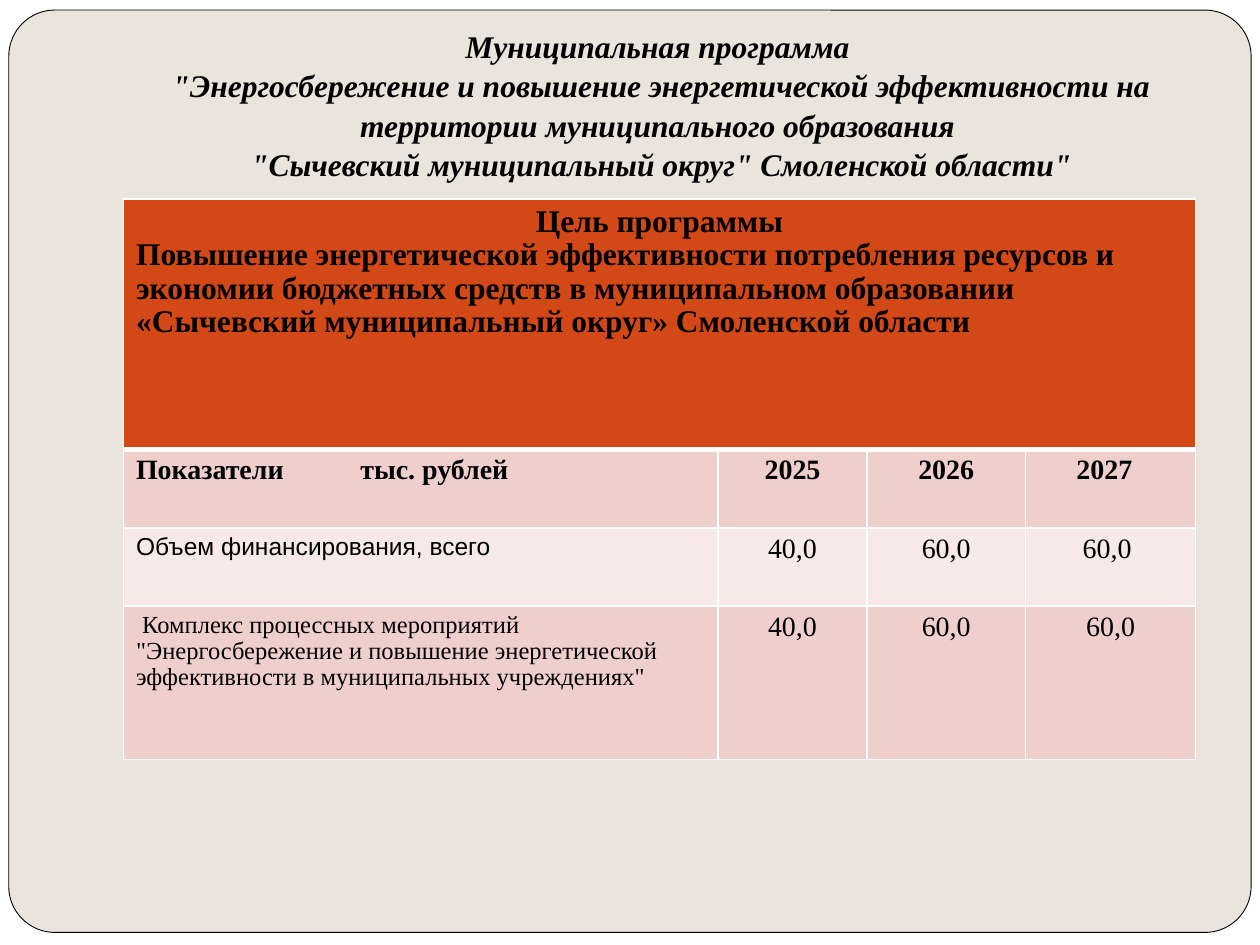
from dataclasses import dataclass

from lxml.etree import SubElement
from pptx import Presentation
from pptx.dml.color import RGBColor
from pptx.enum.shapes import MSO_SHAPE as Shape
from pptx.enum.text import MSO_ANCHOR as Anchor, PP_ALIGN as Align
from pptx.oxml.ns import qn
from pptx.util import Inches, Pt

SERIF, SANS = "Times New Roman", "Arial"
BLACK, WHITE, PAPER = "000000", "FFFFFF", "E9E5DC"
ORANGE, PINK, PALE = "D34817", "EFCFCC", "F7E9E8"
COLUMNS = (4.72, 1.18, 1.26, 1.35)
ROWS = (1.99, 0.62, 0.62, 1.22)
UNIT_TAB = 1.78

TITLE = (
    "Муниципальная программа \v"
    '"Энергосбережение и повышение энергетической эффективности на '
    "территории муниципального образования \v"
    '"Сычевский муниципальный округ" Смоленской области"'
)
GOAL = (
    "Повышение энергетической эффективности потребления ресурсов и экономии "
    "бюджетных средств в муниципальном образовании «Сычевский муниципальный "
    "округ» Смоленской области"
)
ACTIVITIES = (
    ' Комплекс процессных мероприятий "Энергосбережение и повышение '
    'энергетической эффективности в муниципальных учреждениях"'
)


@dataclass(frozen=True)
class Style:
    size: float
    bold: bool = False
    italic: bool = False
    name: str = SERIF
    align: Align = Align.LEFT
    spacing: float = 0.96


@dataclass(frozen=True)
class Indicator:
    label: str
    values: tuple[str, ...]
    fill: str
    label_style: Style
    value_style: Style


HEADING = Style(18, bold=True, italic=True, align=Align.CENTER, spacing=1.04)
GOAL_HEAD = Style(18, bold=True, align=Align.CENTER)
GOAL_BODY = Style(18, bold=True)
YEAR = Style(16, bold=True, align=Align.CENTER)
AMOUNT = Style(16, align=Align.CENTER)
INDICATORS = (
    Indicator("Показатели\tтыс. рублей", ("2025", "2026", "2027"), PINK, Style(16, bold=True), YEAR),
    Indicator("Объем финансирования, всего", ("40,0", "60,0", "60,0 "), PALE, Style(14, name=SANS), AMOUNT),
    Indicator(ACTIVITIES, ("40,0", "60,0", "60,0"), PINK, Style(14), AMOUNT),
)


def color(value: str) -> RGBColor:
    return RGBColor.from_string(value)


def write(paragraph, text: str, style: Style) -> None:
    paragraph.text = text
    paragraph.alignment = style.align
    paragraph.line_spacing = style.spacing
    formats = {"size": Pt(style.size), "bold": style.bold, "italic": style.italic, "name": style.name}
    for run in paragraph.runs:
        for attribute, value in formats.items():
            setattr(run.font, attribute, value)
        run.font.color.rgb = color(BLACK)


def add_panel(slide, kind: Shape, box: tuple[float, ...], fill: str):
    panel = slide.shapes.add_shape(kind, *map(Inches, box))
    panel.shadow.inherit = False
    panel.fill.solid()
    panel.fill.fore_color.rgb = color(fill)
    panel.line.fill.background()
    return panel


def add_frame(slide) -> None:
    add_panel(slide, Shape.RECTANGLE, (0, 0, 10, 7.5), WHITE)
    sheet = add_panel(slide, Shape.ROUNDED_RECTANGLE, (0.07, 0.08, 9.86, 7.32), PAPER)
    sheet.adjustments[0] = 0.05
    sheet.line.color.rgb = color(BLACK)
    sheet.line.width = Pt(0.5)


def add_title(slide) -> None:
    frame = slide.shapes.add_textbox(*map(Inches, (1, 0.3, 8.5, 1.25))).text_frame
    formats = {"word_wrap": True, "vertical_anchor": Anchor.BOTTOM, "margin_bottom": Inches(0.1)}
    for attribute, value in formats.items():
        setattr(frame, attribute, value)
    write(frame.paragraphs[0], TITLE, HEADING)


def paint_cell(cell, fill: str, top: float = 1, bottom: float = 1) -> None:
    properties = cell._tc.get_or_add_tcPr()
    for side, width in {"lnL": 1, "lnR": 1, "lnT": top, "lnB": bottom}.items():
        border = SubElement(properties, qn(f"a:{side}"), w=str(Pt(width)))
        SubElement(SubElement(border, qn("a:solidFill")), qn("a:srgbClr"), val=WHITE)
    cell.fill.solid()
    cell.fill.fore_color.rgb = color(fill)


def add_tab(paragraph, position: float) -> None:
    stops = SubElement(paragraph._p.get_or_add_pPr(), qn("a:tabLst"))
    SubElement(stops, qn("a:tab"), pos=str(Inches(position)), algn="l")


def add_goal(table) -> None:
    for cell in table.rows[0].cells:
        paint_cell(cell, ORANGE, bottom=3)
    goal = table.cell(0, 0)
    goal.merge(table.cell(0, len(COLUMNS) - 1))
    write(goal.text_frame.paragraphs[0], "Цель программы", GOAL_HEAD)
    write(goal.text_frame.add_paragraph(), GOAL, GOAL_BODY)


def add_indicator(table, row: int, indicator: Indicator) -> None:
    for column, text in enumerate((indicator.label, *indicator.values)):
        cell = table.cell(row, column)
        paint_cell(cell, indicator.fill, top=3 if row == 1 else 1)
        style = indicator.value_style if column else indicator.label_style
        write(cell.text_frame.paragraphs[0], text, style)


def add_program_table(slide) -> None:
    box = map(Inches, (0.98, 1.58, sum(COLUMNS), sum(ROWS)))
    table = slide.shapes.add_table(len(ROWS), len(COLUMNS), *box).table
    table.first_row = table.horz_banding = False
    for column, width in zip(table.columns, COLUMNS):
        column.width = Inches(width)
    for row, height in zip(table.rows, ROWS):
        row.height = Inches(height)
    add_goal(table)
    for row, indicator in enumerate(INDICATORS, start=1):
        add_indicator(table, row, indicator)
    add_tab(table.cell(1, 0).text_frame.paragraphs[0], UNIT_TAB)
    table.cell(1, 3).margin_right = Inches(0.2)


def main() -> None:
    """Build the slide on the municipal energy-saving programme."""
    deck = Presentation()
    deck.slide_width, deck.slide_height = Inches(10), Inches(7.5)
    slide = deck.slides.add_slide(deck.slide_layouts[6])
    slide.background.fill.solid()
    slide.background.fill.fore_color.rgb = color(PAPER)
    add_frame(slide)
    add_title(slide)
    add_program_table(slide)
    deck.save("out.pptx")


if __name__ == "__main__":
    main()
